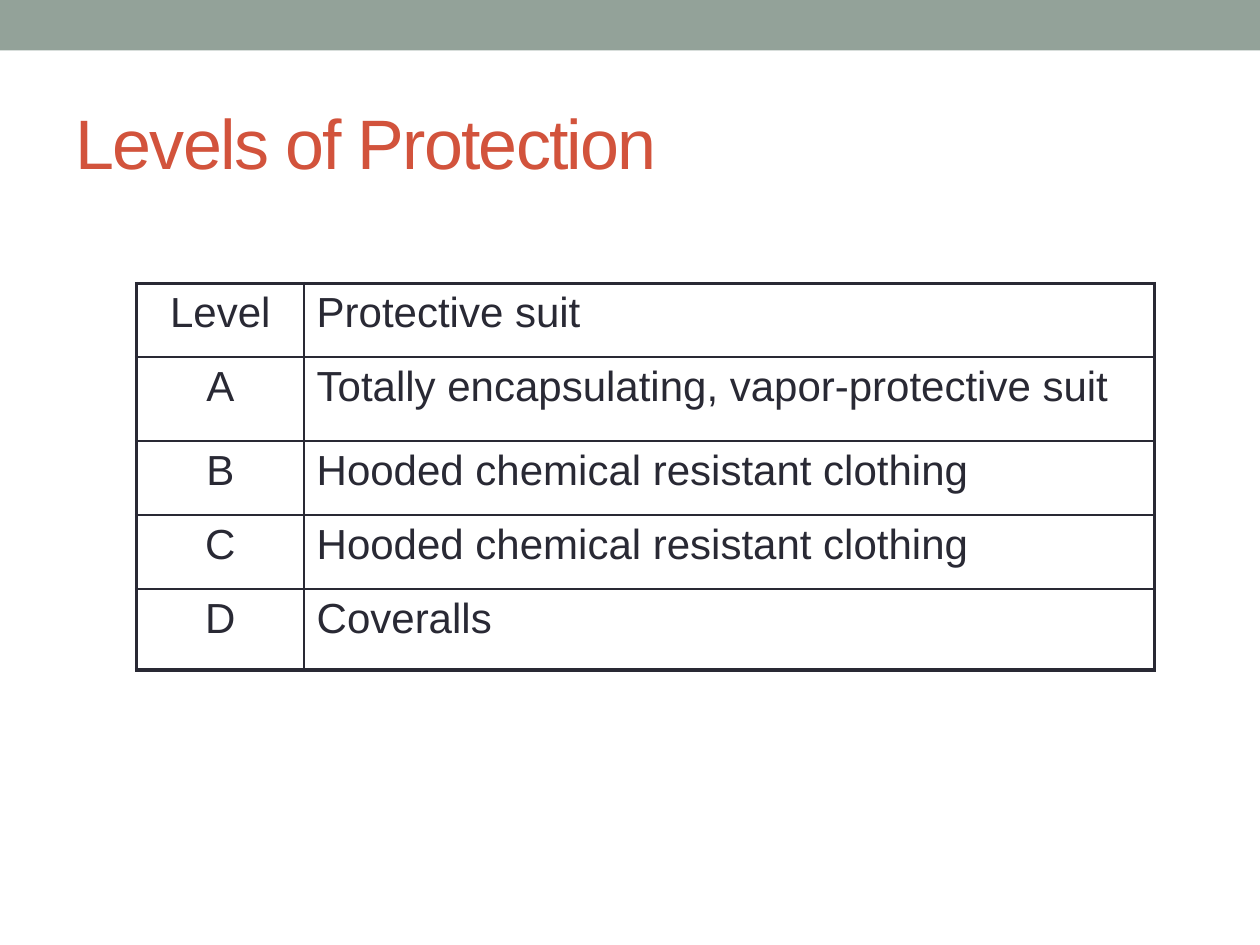
from typing import NamedTuple

from lxml import etree
from pptx import Presentation
from pptx import util as u
from pptx.dml.color import RGBColor
from pptx.enum import shapes, text
from pptx.oxml import ns

FONT = "Arial"
INK, ACCENT, BAND = "292934", "D2533C", "93A299"
OUTER, INNER = 2.25, 1
COLUMN_WIDTHS = (95.76, 486)


class Level(NamedTuple):
    name: str
    suit: str
    height: float


LEVELS = (
    Level("Level", "Protective suit", 42),
    Level("A", "Totally encapsulating, vapor-protective suit", 48),
    Level("B", "Hooded chemical resistant clothing", 42.25),
    Level("C", "Hooded chemical resistant clothing", 42.25),
    Level("D", "Coveralls", 46.5),
)


def color(hex_value: str) -> RGBColor:
    return RGBColor.from_string(hex_value)


def write(paragraph, words: str, size: float, hex_value: str):
    run = paragraph.add_run()
    run.text = words
    run.font.name = FONT
    run.font.size = u.Pt(size)
    run.font.color.rgb = color(hex_value)
    return run


def add_border(cell, side: str, width: float) -> None:
    """Draw one side (L, R, T or B); call in that order, before the fill."""
    line = etree.SubElement(cell._tc.get_or_add_tcPr(), ns.qn(f"a:ln{side}"), w=str(u.Pt(width)))
    fill = etree.SubElement(line, ns.qn("a:solidFill"))
    etree.SubElement(fill, ns.qn("a:srgbClr"), val=INK)


def add_band(slide) -> None:
    band = slide.shapes.add_shape(shapes.MSO_SHAPE.RECTANGLE, 0, 0, u.Pt(720), u.Pt(28.8))
    band.shadow.inherit = False
    band.fill.solid()
    band.fill.fore_color.rgb = color(BAND)
    band.line.fill.background()


def add_title(slide, words: str) -> None:
    title = slide.shapes.title
    title.left, title.top, title.width, title.height = map(u.Pt, (36, 41.76, 648, 77.76))
    title.text_frame.vertical_anchor = text.MSO_ANCHOR.MIDDLE
    heading = title.text_frame.paragraphs[0]
    heading.alignment = text.PP_ALIGN.LEFT
    run = write(heading, words, 40, ACCENT)
    run.font._element.set("spc", "-100")


def add_levels_table(slide, levels: tuple[Level, ...]) -> None:
    table = slide.shapes.add_table(
        len(levels), len(COLUMN_WIDTHS), u.Pt(78), u.Pt(162),
        u.Pt(sum(COLUMN_WIDTHS)), u.Pt(sum(level.height for level in levels)),
    ).table
    table.first_row = table.horz_banding = False
    for column, width in zip(table.columns, COLUMN_WIDTHS):
        column.width = u.Pt(width)

    last_row, last_column = len(levels) - 1, len(COLUMN_WIDTHS) - 1
    alignments = (text.PP_ALIGN.CENTER, text.PP_ALIGN.LEFT)
    for r, level in enumerate(levels):
        table.rows[r].height = u.Pt(level.height)
        for c, words in enumerate((level.name, level.suit)):
            cell = table.cell(r, c)
            on_edge = {"L": c == 0, "R": c == last_column, "T": r == 0, "B": r == last_row}
            for side, is_outer in on_edge.items():
                add_border(cell, side, OUTER if is_outer else INNER)
            cell.fill.background()
            paragraph = cell.text_frame.paragraphs[0]
            paragraph.alignment = alignments[c]
            write(paragraph, words, 24, INK)


def main() -> None:
    deck = Presentation()
    deck.slide_width, deck.slide_height = u.Pt(720), u.Pt(540)
    slide = deck.slides.add_slide(deck.slide_layouts.get_by_name("Title Only"))
    add_band(slide)
    add_title(slide, "Levels of Protection")
    add_levels_table(slide, LEVELS)
    deck.save("out.pptx")


if __name__ == "__main__":
    main()
